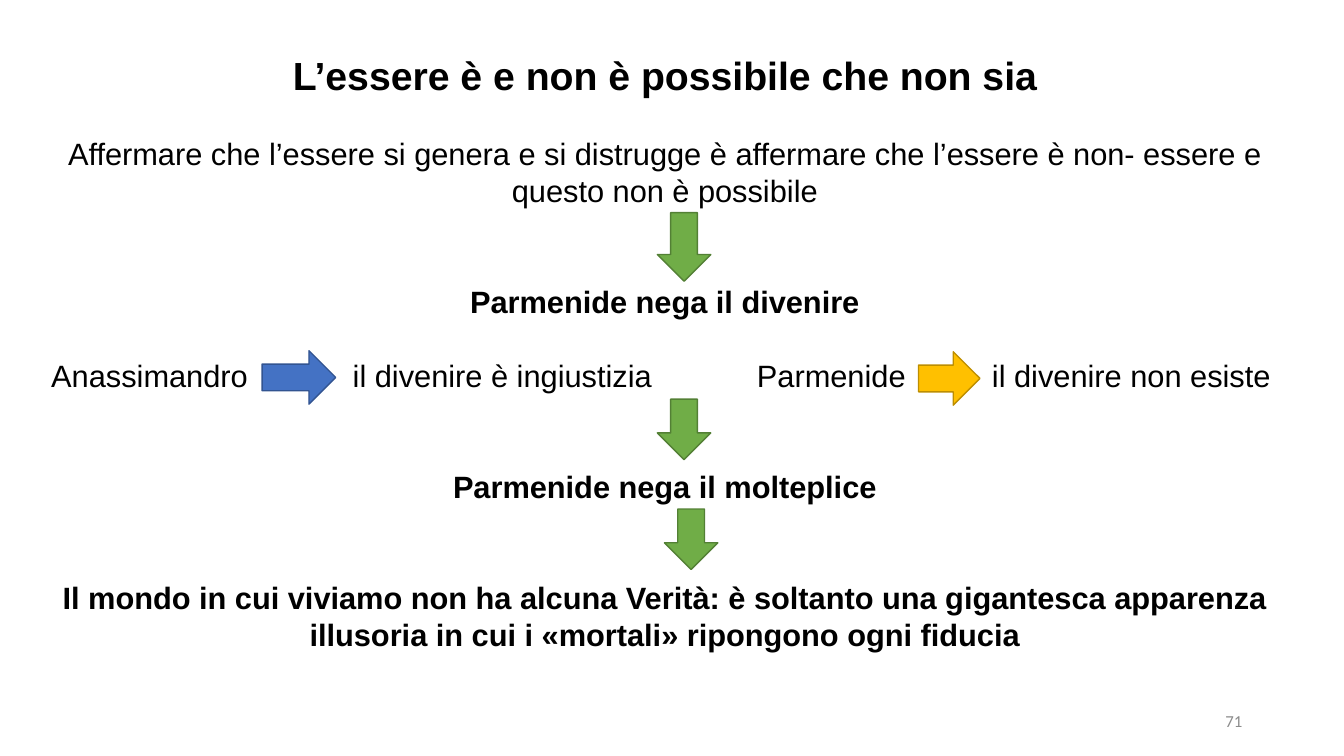
from dataclasses import dataclass

from lxml import etree
from pptx import Presentation
from pptx.dml.color import RGBColor
from pptx.enum import shapes, text
from pptx.oxml.ns import qn
from pptx.util import Inches, Pt


@dataclass(frozen=True)
class Theme:
    font: str = "Arial"
    number_font: str = "Calibri"
    title_size: float = 28
    body_size: float = 22
    number_size: float = 12
    title_line: float = 33.6
    body_line: float = 26.4
    ink: str = "000000"
    number_ink: str = "8C8C8C"
    green: tuple = ("70AD47", "538035")
    blue: tuple = ("4472C4", "325491")
    yellow: tuple = ("FFC000", "BD8E00")


THEME = Theme()
LEFT, WIDTH = 0.41, 12.37
CENTER, START, END = text.PP_ALIGN.CENTER, text.PP_ALIGN.LEFT, text.PP_ALIGN.RIGHT
DOWN, RIGHT = shapes.MSO_SHAPE.DOWN_ARROW, shapes.MSO_SHAPE.RIGHT_ARROW

TITLE = "L’essere è e non è possibile che non sia"

# Wording, bold, lines of space before
ARGUMENT = [
    ("Affermare che l’essere si genera e si distrugge è affermare che "
     "l’essere è non- essere e questo non è possibile", False, 0),
    ("Parmenide nega il divenire", True, 2),
    ("Parmenide nega il molteplice", True, 4),
    ("Il mondo in cui viviamo non ha alcuna Verità: è soltanto una gigantesca "
     "apparenza illusoria in cui i «mortali» ripongono ogni fiducia", True, 2),
]

# Wording, left, width
COMPARISON_TOP, COMPARISON_HEIGHT = 3.49, 0.47
COMPARISON = [
    ("Anassimandro", LEFT, 2.19),
    ("il divenire è ingiustizia", 3.4, 3.3),
    ("Parmenide", 7.41, 1.7),
    ("il divenire non esiste", 9.74, 3.1),
]

# Preset, left, top, width, height, fill and line
ARROWS = [
    (DOWN, 6.52, 2.11, 0.53, 0.68, THEME.green),
    (RIGHT, 2.6, 3.48, 0.73, 0.53, THEME.blue),
    (RIGHT, 9.11, 3.49, 0.61, 0.53, THEME.yellow),
    (DOWN, 6.52, 3.96, 0.53, 0.6, THEME.green),
    (DOWN, 6.59, 5.05, 0.53, 0.6, THEME.green),
]


def place(holder, left, top, width, height, anchor=text.MSO_ANCHOR.TOP):
    holder.left, holder.top = Inches(left), Inches(top)
    holder.width, holder.height = Inches(width), Inches(height)
    frame = holder.text_frame
    frame.word_wrap = True
    frame.auto_size = text.MSO_AUTO_SIZE.NONE
    frame.vertical_anchor = anchor
    return frame


def write(paragraph, wording, size, bold=False, align=CENTER,
          font=THEME.font, ink=THEME.ink):
    paragraph.alignment = align
    run = paragraph.add_run()
    run.text = wording
    run.font.name, run.font.size, run.font.bold = font, Pt(size), bold
    run.font.color.rgb = RGBColor.from_string(ink)


def set_spacing(paragraph, line, before=0):
    paragraph.line_spacing = Pt(line)
    paragraph.space_before = Pt(before)
    paragraph.space_after = Pt(0)


def remove_bullet(paragraph):
    properties = paragraph._p.get_or_add_pPr()
    properties.set("marL", "0")
    properties.set("indent", "0")
    etree.SubElement(properties, qn("a:buNone"))


def add_argument(frame):
    for index, (wording, bold, gap) in enumerate(ARGUMENT):
        paragraph = frame.add_paragraph() if index else frame.paragraphs[0]
        write(paragraph, wording, THEME.body_size, bold)
        set_spacing(paragraph, THEME.body_line, gap * THEME.body_line)
        remove_bullet(paragraph)


def add_comparison_label(slide, wording, left, width):
    label = slide.shapes.add_textbox(0, 0, 0, 0)
    frame = place(label, left, COMPARISON_TOP, width, COMPARISON_HEIGHT)
    write(frame.paragraphs[0], wording, THEME.body_size, align=START)
    set_spacing(frame.paragraphs[0], THEME.body_line)


def add_arrow(slide, preset, left, top, width, height, colours):
    arrow = slide.shapes.add_shape(
        preset, Inches(left), Inches(top), Inches(width), Inches(height))
    fill, line = map(RGBColor.from_string, colours)
    arrow.shadow.inherit = False
    arrow.fill.solid()
    arrow.fill.fore_color.rgb = fill
    arrow.line.color.rgb = line
    arrow.line.width = Pt(1)


def add_page_number(slide, number):
    footer = slide.shapes.add_textbox(0, 0, 0, 0)
    frame = place(footer, 9.42, 6.95, 3, 0.4, text.MSO_ANCHOR.MIDDLE)
    write(frame.paragraphs[0], number, THEME.number_size, align=END,
          font=THEME.number_font, ink=THEME.number_ink)


def main():
    deck = Presentation()
    deck.slide_width, deck.slide_height = Inches(13.33), Inches(7.5)
    slide = deck.slides.add_slide(deck.slide_layouts[1])

    # Thesis
    heading = place(slide.shapes.title, LEFT, 0.46, WIDTH, 0.6).paragraphs[0]
    write(heading, TITLE, THEME.title_size, bold=True)
    set_spacing(heading, THEME.title_line)

    # Chain of reasoning
    add_argument(place(slide.placeholders[1], LEFT, 1.29, WIDTH, 5.3))

    # Comparison of the two philosophers
    for label in COMPARISON:
        add_comparison_label(slide, *label)

    # Arrows between the steps
    for arrow in ARROWS:
        add_arrow(slide, *arrow)

    # Footer
    add_page_number(slide, "71")
    deck.save("out.pptx")


if __name__ == "__main__":
    main()
